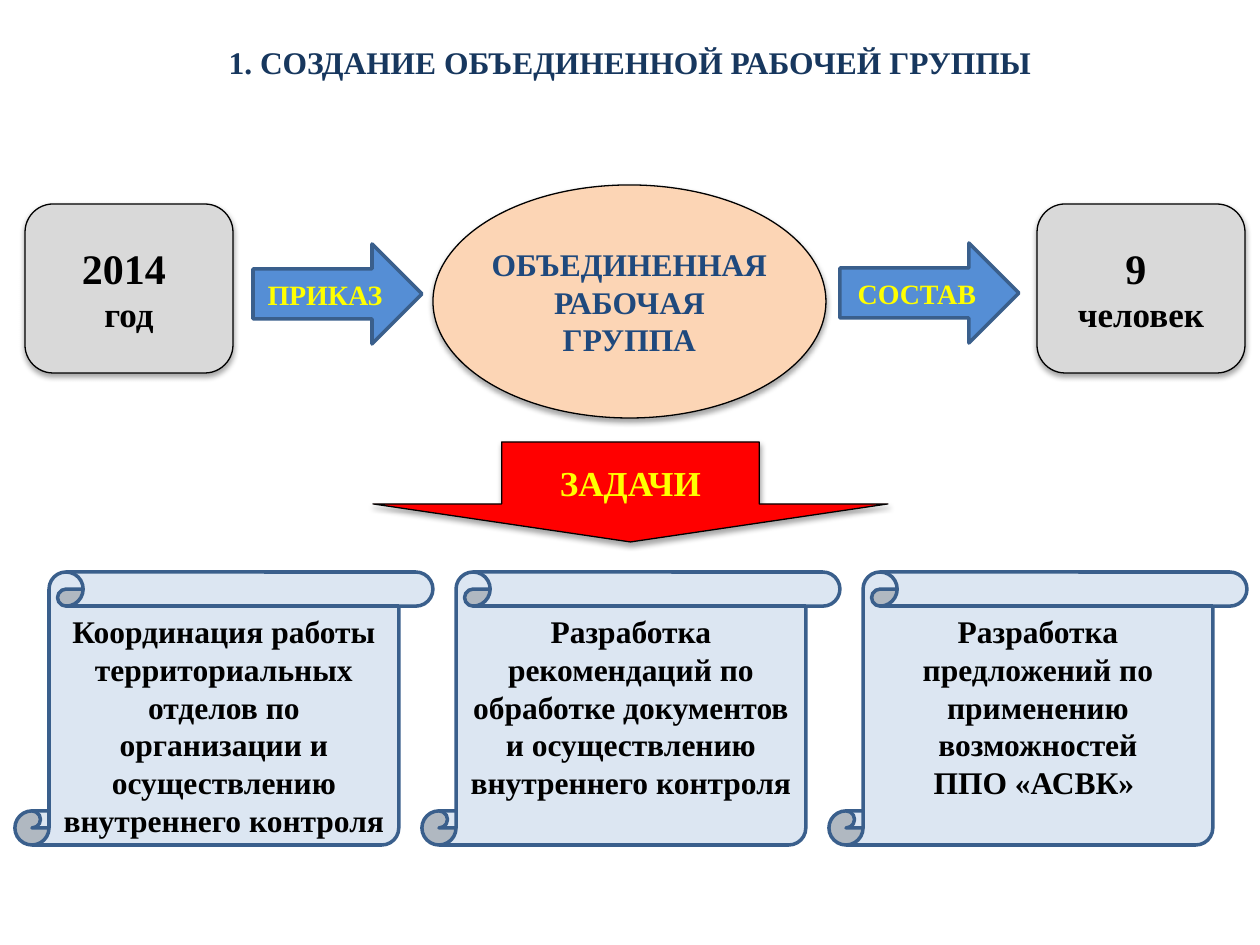
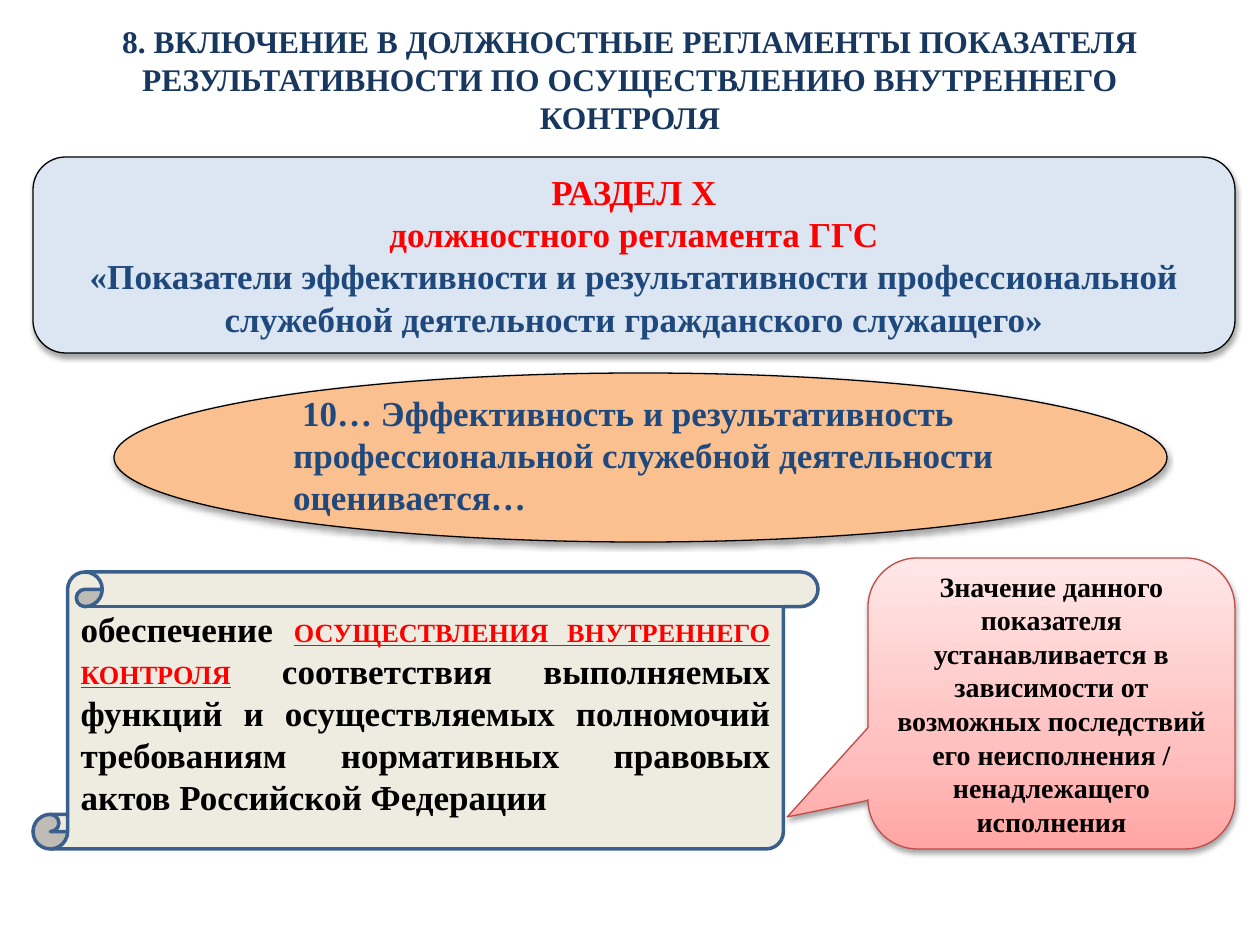
from copy import deepcopy
from dataclasses import dataclass

from lxml.etree import SubElement
from pptx import Presentation
from pptx.dml.color import RGBColor
from pptx.enum.shapes import MSO_SHAPE
from pptx.enum.text import MSO_ANCHOR, MSO_AUTO_SIZE, PP_ALIGN
from pptx.oxml.ns import qn
from pptx.util import Emu, Pt

PX_PER_INCH = 126
FONT = "Times New Roman"

BLACK = RGBColor(0x00, 0x00, 0x00)
RED = RGBColor(0xFF, 0x00, 0x00)
YELLOW = RGBColor(0xFF, 0xFF, 0x00)
NAVY = RGBColor(0x17, 0x37, 0x5E)
DARK_BLUE = RGBColor(0x1F, 0x49, 0x7D)
EDGE_BLUE = RGBColor(0x3A, 0x5F, 0x8C)
ARROW_BLUE = RGBColor(0x55, 0x8E, 0xD5)
PALE_BLUE = RGBColor(0xDC, 0xE6, 0xF2)
PEACH = RGBColor(0xFC, 0xD5, 0xB5)
ORANGE = RGBColor(0xFA, 0xC0, 0x90)
GREY = RGBColor(0xD9, 0xD9, 0xD9)
CREAM = RGBColor(0xEE, 0xEC, 0xE1)
CALLOUT_EDGE = RGBColor(0xBF, 0x4C, 0x48)
PINK_STOPS = (
    (0.0, RGBColor(0xFF, 0xA6, 0xA5)),
    (0.35, RGBColor(0xFF, 0xC0, 0xBF)),
    (1.0, RGBColor(0xFF, 0xE7, 0xE7)),
)

Box = tuple[int, int, int, int]


@dataclass(frozen=True)
class Run:
    text: str
    size: int
    color: RGBColor = BLACK
    underline: bool = False


@dataclass(frozen=True)
class Block:
    """A filled shape; each item of paragraphs is a tuple of runs."""
    kind: MSO_SHAPE
    box: Box
    fill: RGBColor | tuple
    paragraphs: tuple[tuple[Run, ...], ...]
    edge: RGBColor = BLACK
    raised: bool = True
    anchor: MSO_ANCHOR = MSO_ANCHOR.MIDDLE
    align: PP_ALIGN = PP_ALIGN.CENTER
    adjustments: tuple[float, ...] = ()
    insets: Box = (13, 6, 13, 6)
    margin: int = 0
    first_indent: int = 0


def px(n: int) -> Emu:
    return Emu(round(n * 914400 / PX_PER_INCH))


def add_run(p, run: Run) -> None:
    r = p.add_run()
    r.text = run.text
    r.font.name = FONT
    r.font.size = Pt(run.size)
    r.font.bold = True
    r.font.color.rgb = run.color
    if run.underline:
        r.font.underline = True


def add_title_slide(prs, title: str, box: Box):
    """Add a title-only slide and format its title."""
    s = prs.slides.add_slide(prs.slide_layouts[5])
    sp = s.shapes.title
    sp.left, sp.top, sp.width, sp.height = map(px, box)
    tf = sp.text_frame
    tf.word_wrap = True
    tf.auto_size = MSO_AUTO_SIZE.NONE
    tf.vertical_anchor = MSO_ANCHOR.TOP
    p = tf.paragraphs[0]
    p.alignment = PP_ALIGN.CENTER
    p.space_before = Pt(0)
    add_run(p, Run(title, 18, NAVY))
    return s


def fill_shape(sp, fill: RGBColor | tuple) -> None:
    if isinstance(fill, RGBColor):
        sp.fill.solid()
        sp.fill.fore_color.rgb = fill
        return
    sp.fill.gradient()
    sp.fill.gradient_angle = 90
    stops = sp._element.spPr.find(".//" + qn("a:gsLst"))
    while len(stops) < len(fill):
        stops.append(deepcopy(stops[0]))
    for stop, (position, color) in zip(sp.fill.gradient_stops, fill):
        stop.position = position
        stop.color.rgb = color


def add_shadow(sp) -> None:
    effects = sp._element.spPr.find(qn("a:effectLst"))
    shadow = SubElement(effects, qn("a:outerShdw"), blurRad="40000",
                        dist="23000", dir="5400000", rotWithShape="0")
    color = SubElement(shadow, qn("a:srgbClr"), val=str(BLACK))
    SubElement(color, qn("a:alpha"), val="35000")


def add_block(s, block: Block) -> None:
    sp = s.shapes.add_shape(block.kind, *map(px, block.box))
    for i, value in enumerate(block.adjustments):
        sp.adjustments[i] = value
    fill_shape(sp, block.fill)
    sp.line.color.rgb = block.edge
    sp.line.width = Pt(0.75 if block.raised else 2)
    sp.shadow.inherit = False
    if block.raised:
        add_shadow(sp)

    tf = sp.text_frame
    tf.word_wrap = True
    tf.vertical_anchor = block.anchor
    (tf.margin_left, tf.margin_top,
     tf.margin_right, tf.margin_bottom) = map(px, block.insets)
    for i, runs in enumerate(block.paragraphs):
        p = tf.add_paragraph() if i else tf.paragraphs[0]
        p.alignment = block.align
        if block.margin:
            pPr = p._p.get_or_add_pPr()
            pPr.set("marL", str(px(block.margin)))
            pPr.set("indent", str(px(block.first_indent)))
        for run in runs:
            add_run(p, run)


def fact(left: int, value: str, unit: str) -> Block:
    return Block(MSO_SHAPE.ROUNDED_RECTANGLE, (left, 204, 208, 169), GREY,
                 ((Run(value, 24),), (Run(unit, 20),)))


def labelled_arrow(left: int, top: int, width: int, label: str) -> Block:
    return Block(MSO_SHAPE.RIGHT_ARROW, (left, top, width, 100), ARROW_BLUE,
                 ((Run(label, 16, YELLOW),),), EDGE_BLUE, raised=False)


def task_scroll(index: int, lines: tuple[str, ...]) -> Block:
    return Block(MSO_SHAPE.VERTICAL_SCROLL, (15 + 407 * index, 572, 418, 273),
                 PALE_BLUE, tuple((Run(line, 18),) for line in lines),
                 EDGE_BLUE, raised=False, anchor=MSO_ANCHOR.TOP)


TASKS = (
    ("Координация работы территориальных отделов по организации "
     "и осуществлению внутреннего контроля",),
    ("Разработка рекомендаций по обработке документов "
     "и осуществлению внутреннего контроля",),
    ("Разработка предложений по применению возможностей", "ППО «АСВК» "),
)

WORKING_GROUP = (
    *(task_scroll(i, lines) for i, lines in enumerate(TASKS)),
    Block(MSO_SHAPE.DOWN_ARROW, (373, 442, 515, 100), RED,
          ((Run("ЗАДАЧИ", 20, YELLOW),),), adjustments=(0.5, 0.38)),
    Block(MSO_SHAPE.OVAL, (433, 185, 393, 233), PEACH,
          ((Run("ОБЪЕДИНЕННАЯ РАБОЧАЯ ГРУППА", 18, DARK_BLUE),),),
          insets=(0, 0, 0, 0)),
    labelled_arrow(253, 244, 169, "ПРИКАЗ"),
    labelled_arrow(840, 243, 179, "СОСТАВ"),
    fact(25, "2014 ", "год"),
    fact(1037, "9 ", "человек"),
)

JOB_REGULATIONS = (
    Block(MSO_SHAPE.OVAL, (114, 373, 1053, 169), ORANGE,
          ((Run("10… Эффективность и результативность профессиональной "
                "служебной деятельности оценивается…", 20, DARK_BLUE),),),
          anchor=MSO_ANCHOR.BOTTOM, align=PP_ALIGN.LEFT,
          insets=(0, 0, 0, 0), margin=25, first_indent=9),
    Block(MSO_SHAPE.ROUNDED_RECTANGULAR_CALLOUT, (868, 558, 367, 291), PINK_STOPS,
          ((Run("Значение данного показателя устанавливается в зависимости "
                "от возможных последствий его неисполнения / "
                "ненадлежащего исполнения", 16),),),
          CALLOUT_EDGE, adjustments=(-0.72, 0.39, 0.17), insets=(0, 0, 0, 0)),
    Block(MSO_SHAPE.ROUNDED_RECTANGLE, (33, 157, 1202, 196), PALE_BLUE,
          ((Run("РАЗДЕЛ Х", 20, RED),),
           (Run("должностного регламента ГГС", 20, RED),),
           (Run("«Показатели эффективности и результативности "
                "профессиональной служебной деятельности "
                "гражданского служащего»", 20, DARK_BLUE),))),
    Block(MSO_SHAPE.VERTICAL_SCROLL, (33, 572, 785, 277), CREAM,
          ((Run("обеспечение ", 20),
            Run("ОСУЩЕСТВЛЕНИЯ ВНУТРЕННЕГО КОНТРОЛЯ", 15, RED, True),
            Run(" соответствия выполняемых функций и осуществляемых "
                "полномочий требованиям нормативных правовых актов "
                "Российской Федерации", 20)),),
          EDGE_BLUE, raised=False, align=PP_ALIGN.JUSTIFY,
          insets=(13, 6, 13, 19)),
)

SLIDES = (
    ("1. СОЗДАНИЕ ОБЪЕДИНЕННОЙ РАБОЧЕЙ ГРУППЫ",
     (94, 37, 1072, 89), WORKING_GROUP),
    ("8. ВКЛЮЧЕНИЕ В ДОЛЖНОСТНЫЕ РЕГЛАМЕНТЫ ПОКАЗАТЕЛЯ "
     "РЕЗУЛЬТАТИВНОСТИ ПО ОСУЩЕСТВЛЕНИЮ ВНУТРЕННЕГО КОНТРОЛЯ",
     (94, 16, 1072, 118), JOB_REGULATIONS),
)


def main() -> None:
    prs = Presentation()
    prs.slide_width, prs.slide_height = px(1260), px(945)
    for title, box, blocks in SLIDES:
        s = add_title_slide(prs, title, box)
        for block in blocks:
            add_block(s, block)
    prs.save("out.pptx")


if __name__ == "__main__":
    main()
